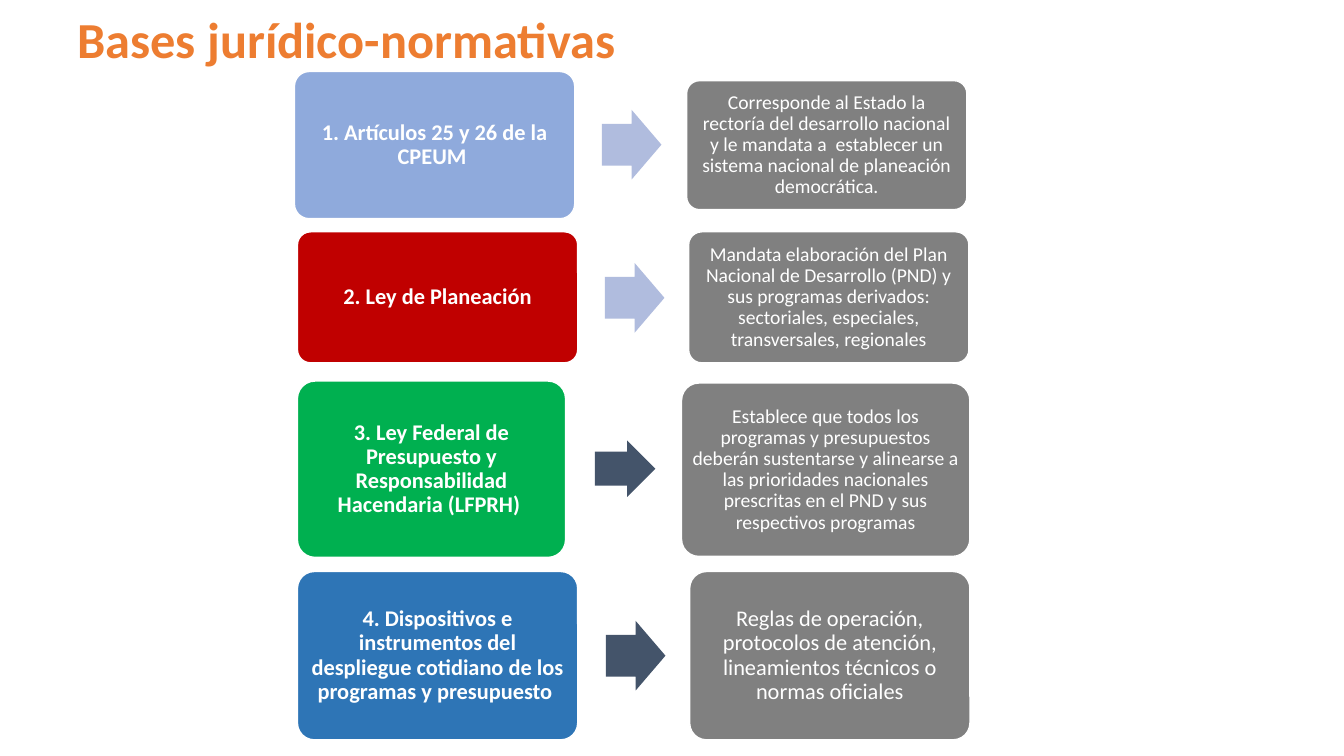
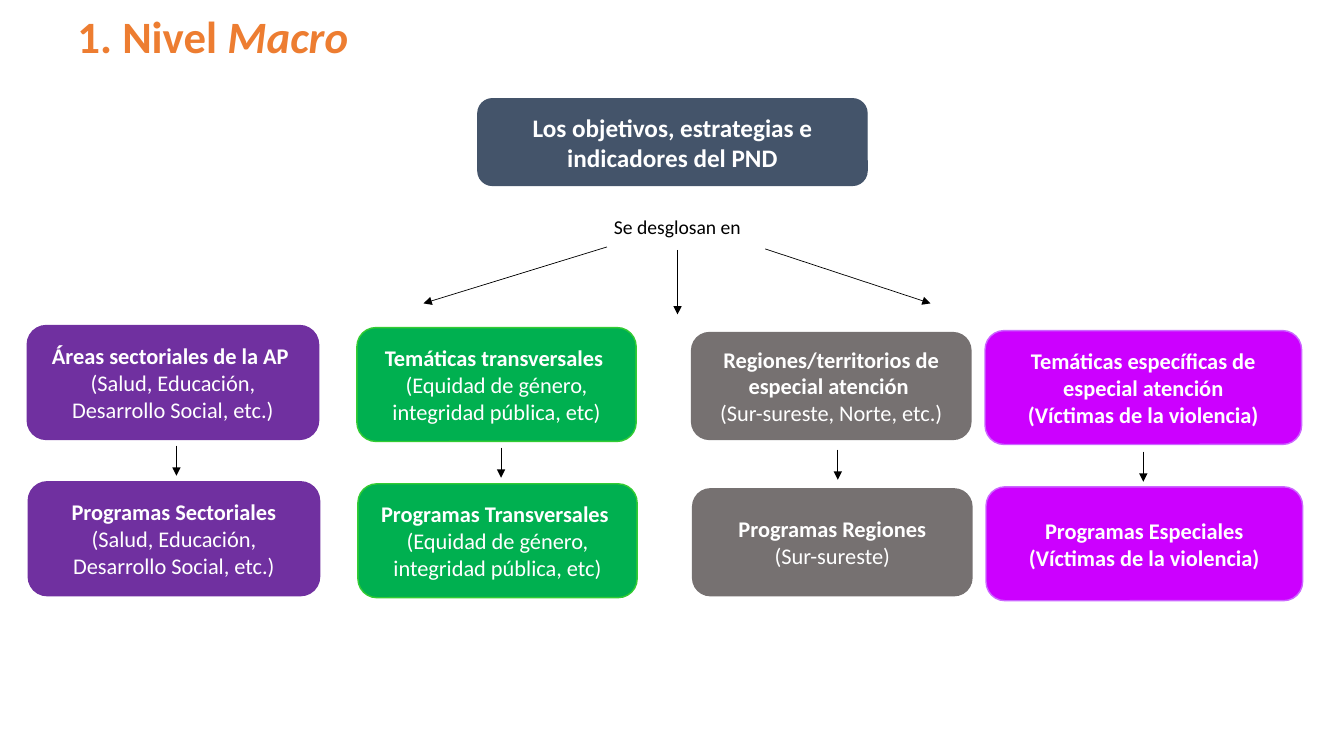
"""Builds two slides on the legal bases of planning and its macro level."""
from lxml import etree
from pptx import Presentation
from pptx.dml.color import RGBColor
from pptx.enum import shapes, text
from pptx.oxml import ns
from pptx.util import Inches, Pt

FONT = "Calibri"
WHITE = RGBColor(0xFF, 0xFF, 0xFF)
BLACK = RGBColor(0x00, 0x00, 0x00)
ORANGE = RGBColor(0xED, 0x7D, 0x31)
SLATE = RGBColor(0x44, 0x54, 0x6A)
GRAY = RGBColor(0x80, 0x80, 0x80)
WARM_GRAY = RGBColor(0x76, 0x71, 0x71)
LIGHT_BLUE = RGBColor(0x8F, 0xAA, 0xDC)
PALE_BLUE = RGBColor(0xB0, 0xBC, 0xDE)
BLUE = RGBColor(0x2E, 0x75, 0xB6)
RED = RGBColor(0xC0, 0x00, 0x00)
GREEN = RGBColor(0x00, 0xB0, 0x50)
LIME = RGBColor(0x33, 0xCC, 0x33)
PURPLE = RGBColor(0x70, 0x30, 0xA0)
MAGENTA = RGBColor(0xCC, 0x00, 0xFF)
PINK = RGBColor(0xCC, 0x66, 0xFF)
CENTER = text.PP_ALIGN.CENTER
LEFT = text.PP_ALIGN.LEFT


def write(sp, lines, size, color=WHITE, align=CENTER, spacing=None):
    """Fill a shape with (text, bold) paragraphs."""
    tf = sp.text_frame
    tf.word_wrap = True
    tf.text = "\n".join(line for line, bold in lines)
    for p, (line, bold) in zip(tf.paragraphs, lines):
        p.alignment = align
        p.line_spacing = spacing
        for r in p.runs:
            r.font.name = FONT
            r.font.size = Pt(size)
            r.font.bold = bold
            r.font.color.rgb = color


def add_box(s, kind, at, fill, line=None):
    """Add a flat filled shape, with an outline when a line colour is given."""
    sp = s.shapes.add_shape(kind, *map(Inches, at))
    sp.shadow.inherit = False
    sp.fill.solid()
    sp.fill.fore_color.rgb = fill
    if line is None:
        sp.line.fill.background()
    else:
        sp.line.color.rgb = line
        sp.line.width = Pt(1)
    return sp


ROUNDED = shapes.MSO_SHAPE.ROUNDED_RECTANGLE
ARROW = shapes.MSO_SHAPE.RIGHT_ARROW

prs = Presentation()
prs.slide_width, prs.slide_height = Inches(13.33), Inches(7.5)

slides = []
for title, size, width in [
    ("Bases jurídico-normativas", 36, 6.94),
    ("1. Nivel ", 32, 11.81),
]:
    s = prs.slides.add_slide(prs.slide_layouts[6])
    sp = s.shapes.add_textbox(Inches(0.67), Inches(0.1), Inches(width), Inches(1.44))
    write(sp, [(title, True)], size, ORANGE, LEFT, 0.9)
    slides.append(s)
bases, macro = slides

r = sp.text_frame.paragraphs[0].add_run()
r.text = "Macro"
r.font.name = FONT
r.font.size = Pt(32)
r.font.bold = r.font.italic = True
r.font.color.rgb = ORANGE

laws = [
    ((2.92, 0.71, 2.78, 1.46), LIGHT_BLUE, "1. Artículos 25 y 26 de la CPEUM ",
     (5.97, 1.09, 0.59, 0.69), PALE_BLUE,
     (6.81, 0.8, 2.78, 1.28), 14,
     "Corresponde al Estado la rectoría del desarrollo nacional y le mandata a  establecer "
     "un sistema nacional de planeación democrática."),
    ((2.95, 2.3, 2.78, 1.3), RED, "2. Ley de Planeación",
     (6, 2.61, 0.59, 0.69), PALE_BLUE,
     (6.83, 2.3, 2.78, 1.3), 14,
     "Mandata elaboración del Plan Nacional de Desarrollo (PND) y sus programas derivados: "
     "sectoriales, especiales, transversales, regionales"),
    ((2.95, 3.78, 2.66, 1.75), GREEN,
     "3. Ley Federal de Presupuesto y Responsabilidad Hacendaria (LFPRH) ",
     (5.9, 4.37, 0.6, 0.56), SLATE,
     (6.76, 3.8, 2.86, 1.72), 14,
     "Establece que todos los programas y presupuestos deberán sustentarse y alinearse a "
     "las prioridades nacionales prescritas en el PND y sus respectivos programas"),
    ((2.95, 5.67, 2.78, 1.67), BLUE,
     "4. Dispositivos e instrumentos del despliegue cotidiano de los programas y presupuesto ",
     (6.01, 6.16, 0.59, 0.69), SLATE,
     (6.84, 5.67, 2.78, 1.67), 16,
     "Reglas de operación, protocolos de atención, lineamientos técnicos o normas oficiales"),
]
for law_at, law_fill, law, arrow_at, arrow_fill, duty_at, duty_size, duty in laws:
    for at, fill, words, size, bold in [
        (law_at, law_fill, law, 16, True),
        (duty_at, GRAY, duty, duty_size, False),
    ]:
        sp = add_box(bases, ROUNDED, at, fill, WHITE)
        sp.adjustments[0] = 0.1
        tf = sp.text_frame
        inset = Inches(0.07 if size == 16 else 0.06)
        tf.margin_left = tf.margin_right = tf.margin_top = tf.margin_bottom = inset
        write(sp, [(words, bold)], size, spacing=0.9)
    sp = add_box(bases, ARROW, arrow_at, arrow_fill)
    sp.adjustments[0] = 0.6

sp = add_box(macro, ROUNDED, (4.74, 0.98, 3.86, 0.86), SLATE, SLATE)
write(sp, [("Los objetivos, estrategias e indicadores del PND", True)], 18)

sp = macro.shapes.add_textbox(Inches(5.99), Inches(2.08), Inches(1.73), Inches(0.34))
write(sp, [("Se desglosan en", False)], 14, BLACK, LEFT)

arrows = [
    (6.02, 2.45, 4.2, 3.01),
    (6.72, 2.48, 6.72, 3.12),
    (7.59, 2.47, 9.23, 3.01),
]
branches = [
    ((0.27, 3.23, 2.89, 1.13), PURPLE, PURPLE, (1.75, 4.42), False,
     ("Áreas sectoriales de la AP ", "(Salud, Educación, Desarrollo Social, etc.)"),
     ("Programas Sectoriales", "(Salud, Educación, Desarrollo Social, etc.)")),
    ((3.54, 3.25, 2.77, 1.13), GREEN, LIME, (4.97, 4.44), False,
     ("Temáticas transversales ", "(Equidad de género, integridad pública, etc)"),
     ("Programas Transversales ", "(Equidad de género, integridad pública, etc)")),
    ((6.86, 3.3, 2.77, 1.06), WARM_GRAY, WARM_GRAY, (8.31, 4.46), False,
     ("Regiones/territorios de especial atención ", "(Sur-sureste, Norte, etc.)"),
     ("Programas Regiones", "(Sur-sureste)")),
    ((9.77, 3.28, 3.14, 1.13), MAGENTA, PINK, (11.34, 4.48), True,
     ("Temáticas específicas de especial atención", "(Víctimas de la violencia)"),
     ("Programas Especiales", "(Víctimas de la violencia)")),
]
for (x, y, w, h), fill, line, (arrow_x, arrow_y), detail_bold, *levels in branches:
    for i, (heading, detail) in enumerate(levels):
        sp = add_box(macro, ROUNDED, (x + 0.01 * i, y + 1.55 * i, w, h), fill, line)
        write(sp, [(heading, True), (detail, detail_bold)], 16)
    arrows.append((arrow_x, arrow_y, arrow_x, arrow_y + 0.3))

for ends in arrows:
    cn = macro.shapes.add_connector(shapes.MSO_CONNECTOR.STRAIGHT, *map(Inches, ends))
    cn.line.color.rgb = BLACK
    cn.line.width = Pt(0.5)
    etree.SubElement(cn.line._get_or_add_ln(), ns.qn("a:tailEnd"), type="triangle")
    etree.SubElement(cn._element.spPr, ns.qn("a:effectLst"))

prs.save("out.pptx")
